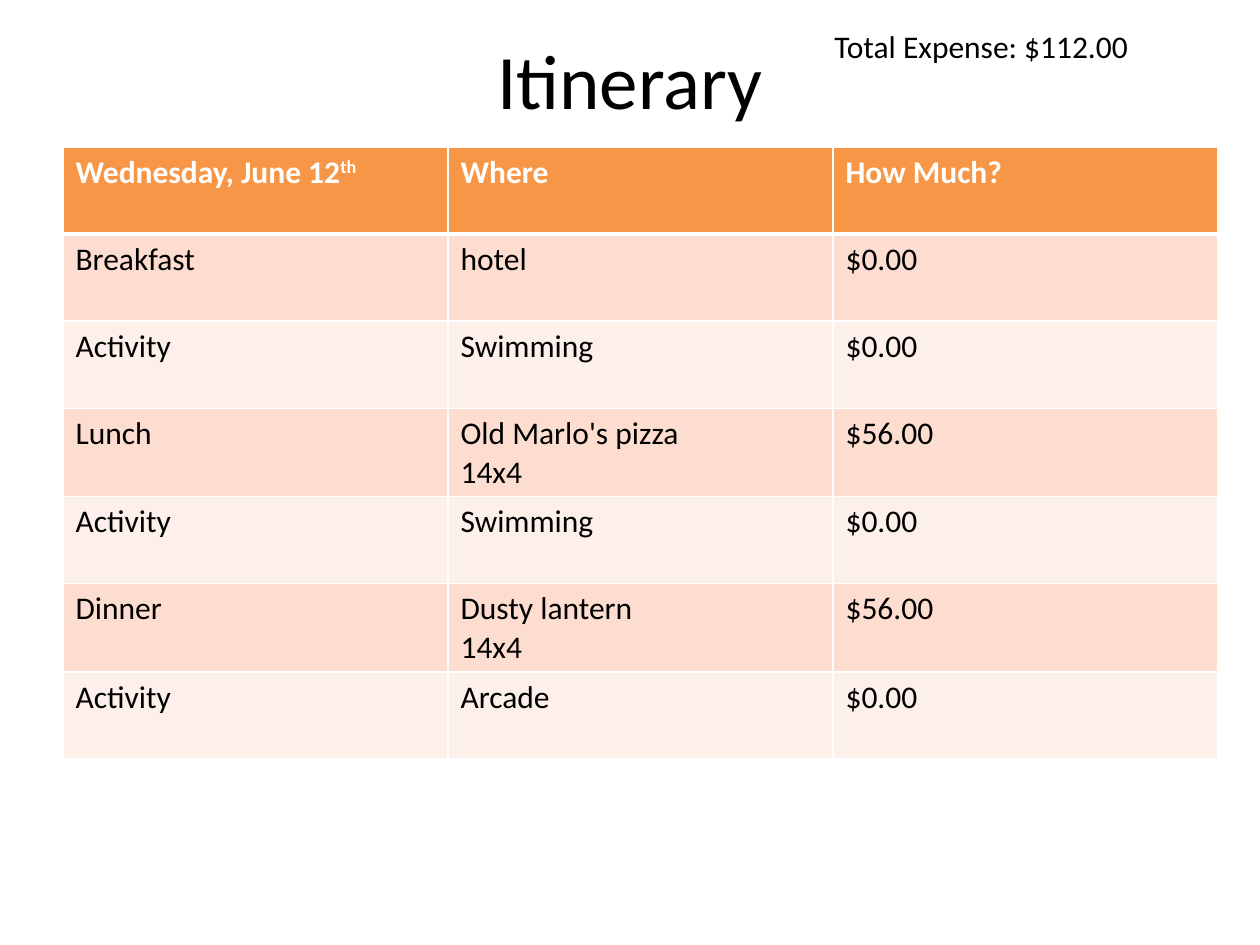
from dataclasses import dataclass

from lxml.etree import SubElement
from pptx import Presentation
from pptx.dml.color import RGBColor as RGB
from pptx.enum.text import MSO_ANCHOR as ANCHOR, PP_ALIGN as ALIGN
from pptx.oxml.ns import qn
from pptx.util import Emu, Pt

PX_PER_INCH = 126


@dataclass(frozen=True)
class Theme:
    font: str = "Calibri"
    title_size: int = 44
    body_size: int = 18
    ink: str = "000000"
    white: str = "FFFFFF"
    header: str = "F79646"
    bands: tuple = ("FCDDCF", "FDEFE9")


THEME = Theme()

# A line break starts a paragraph; a caret starts a superscript.
HEADER = ("Wednesday, June 12^th", "Where", "How Much?")
PLANS = (
    ("Breakfast", "hotel", "$0.00"),
    ("Activity", "Swimming", "$0.00"),
    ("Lunch", "Old Marlo's pizza\n14x4", "$56.00"),
    ("Activity", "Swimming", "$0.00"),
    ("Dinner", "Dusty lantern\n14x4", "$56.00"),
    ("Activity", "Arcade", "$0.00"),
)


def px(n):
    return Emu(round(n * 914400 / PX_PER_INCH))


def write(tf, text, size=THEME.body_size, color=THEME.ink, bold=False,
          align=ALIGN.LEFT, anchor=None):
    tf.word_wrap = True
    if anchor is not None:
        tf.vertical_anchor = anchor
    for i, line in enumerate(text.split("\n")):
        p = tf.add_paragraph() if i else tf.paragraphs[0]
        p.alignment = align
        for j, part in enumerate(line.split("^")):
            r = p.add_run()
            r.text = part
            r.font.name = THEME.font
            r.font.size = Pt(size)
            r.font.bold = bold
            r.font.color.rgb = RGB.from_string(color)
            if j:
                r.font._element.set("baseline", "30000")


def add_text(s, box, text, **fmt):
    tb = s.shapes.add_textbox(*map(px, box))
    write(tb.text_frame, text, **fmt)


def set_borders(cell, **widths):
    """Draw white cell borders; widths are points keyed by L, R, T and B."""
    tcPr = cell._tc.get_or_add_tcPr()
    for side, width in widths.items():
        ln = SubElement(tcPr, qn(f"a:ln{side}"), w=str(Pt(width)))
        fill = SubElement(ln, qn("a:solidFill"))
        SubElement(fill, qn("a:srgbClr"), val=THEME.white)


def fill_cell(cell, text, fill, top=1, bottom=1, **fmt):
    set_borders(cell, L=1, R=1, T=top, B=bottom)
    cell.fill.solid()
    cell.fill.fore_color.rgb = RGB.from_string(fill)
    write(cell.text_frame, text, **fmt)


def add_heading(s, box):
    x, y, w, h = box
    add_text(s, box, "Itinerary", size=THEME.title_size,
             align=ALIGN.CENTER, anchor=ANCHOR.MIDDLE)
    add_text(s, (x + 759, y + 21, 388, 50), "Total Expense: $112.00")


def add_itinerary(s, box):
    x, y, w, h = box
    rows = (HEADER, *PLANS)
    table = s.shapes.add_table(len(rows), len(HEADER), *map(px, box)).table
    table.first_row = table.horz_banding = False
    for col in table.columns:
        col.width = px(w / len(HEADER))
    for i, texts in enumerate(rows):
        table.rows[i].height = px(h / len(rows))
        if i == 0:
            fmt = dict(fill=THEME.header, color=THEME.white, bold=True, bottom=3)
        else:
            fmt = dict(fill=THEME.bands[(i - 1) % 2], top=3 if i == 1 else 1)
        for j, text in enumerate(texts):
            fill_cell(table.cell(i, j), text, **fmt)


def main():
    prs = Presentation()
    prs.slide_width, prs.slide_height = px(1260), px(945)
    s = prs.slides.add_slide(prs.slide_layouts[6])
    add_heading(s, (63, 0, 1134, 158))
    add_itinerary(s, (63, 147, 1155, 610))
    prs.save("out.pptx")


if __name__ == "__main__":
    main()
